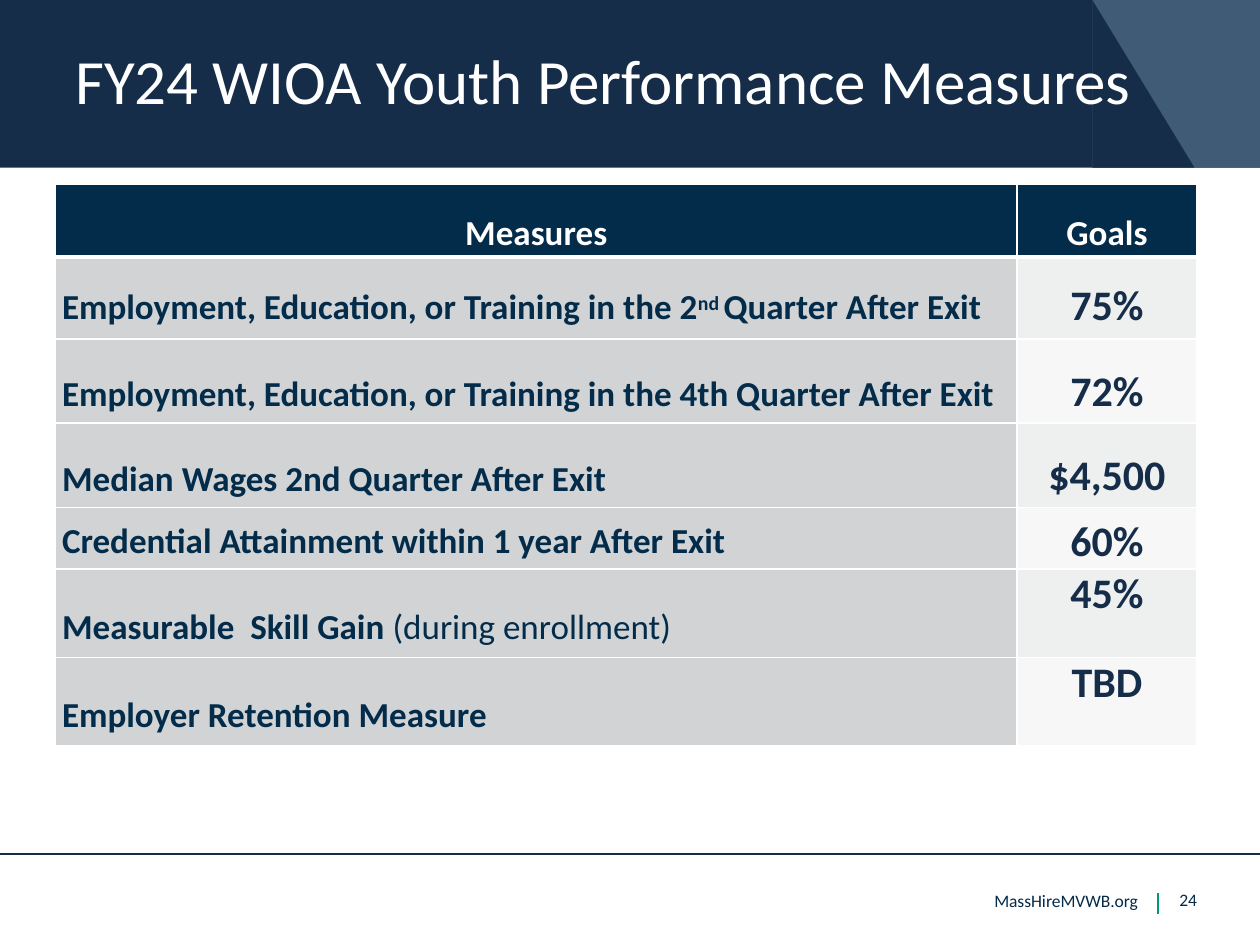
from lxml import etree
from pptx import Presentation
from pptx.dml.color import RGBColor as RGB
from pptx.enum.shapes import MSO_CONNECTOR as CONN, MSO_SHAPE as SHAPE
from pptx.enum.text import MSO_ANCHOR as ANCHOR, PP_ALIGN as ALIGN
from pptx.oxml.ns import qn
from pptx.util import Cm, Pt

C = {"navy": "152D49", "ink": "032B4A", "footer": "042B4A", "slate": "405B76",
     "green": "009876", "white": "FFFFFF", "grey": "D1D3D4",
     "odd": "EEEFEF", "even": "F7F7F7"}
HEAD = {"size": 20, "bold": True, "color": "white"}
MEASURE = {"size": 20, "bold": True, "color": "ink"}
GOAL = {"size": 24, "bold": True, "color": "navy"}
SMALL = {"size": 10, "color": "footer"}
COLS = [19.38, 3.63]
ROWS = [
    (1.65, 0.58, [("Employment, Education, or Training in the 2", {}),
                  ("nd ", {"baseline": "26000", "size": 19.5}),
                  ("Quarter After Exit", {})], 0.48, "75%"),
    (1.7, 0.7, [("Employment, Education, or Training in the 4th Quarter After Exit", {})],
     0.56, "72%"),
    (1.7, 0.7, [("Median Wages 2nd Quarter After Exit", {})], 0.56, "$4,500"),
    (1.24, 0.25, [("Credential Attainment within 1 year After Exit", {})], 0.18, "60%"),
    (1.78, 0.74, [("Measurable  Skill Gain ", {}),
                  ("(during enrollment)", {"bold": False})], 0, "45%"),
    (1.78, 0.74, [("Employer Retention Measure", {})], 0, "TBD"),
]


class Deck:
    """Holds the style and the current slide, with a method per element."""

    def __init__(self, prs, font="Calibri"):
        self.font = font
        self.s = prs.slides.add_slide(prs.slide_layouts[6])

    def fill_text(self, box, tf, runs, style, align=ALIGN.LEFT, margins=(0, 0, 0, 0),
                  spacing=None):
        for side, m in zip(("left", "top", "right", "bottom"), margins):
            setattr(box, f"margin_{side}", Cm(m))
        p = tf.paragraphs[0]
        p.alignment = align
        if spacing:
            p.line_spacing = spacing
        for text, extra in runs:
            r = p.add_run()
            r.text = text
            fmt = {"name": self.font, **style, **extra}
            r.font.color.rgb = RGB.from_string(C[fmt.pop("color")])
            if "baseline" in fmt:
                r._r.get_or_add_rPr().set("baseline", fmt.pop("baseline"))
            fmt["size"] = Pt(fmt["size"])
            for key, value in fmt.items():
                setattr(r.font, key, value)

    def text(self, x, y, w, h, text, style, wrap=True, **layout):
        tf = self.s.shapes.add_textbox(Cm(x), Cm(y), Cm(w), Cm(h)).text_frame
        tf.word_wrap = wrap
        tf.vertical_anchor = ANCHOR.MIDDLE
        self.fill_text(tf, tf, [(text, {})], style, **layout)

    def shape(self, kind, x, y, w, h, color):
        sp = self.s.shapes.add_shape(kind, Cm(x), Cm(y), Cm(w), Cm(h))
        sp.shadow.inherit = False
        sp.fill.solid()
        sp.fill.fore_color.rgb = RGB.from_string(C[color])
        sp.line.fill.background()

    def line(self, x1, y1, x2, y2, color):
        ln = self.s.shapes.add_connector(CONN.STRAIGHT, Cm(x1), Cm(y1), Cm(x2), Cm(y2))
        ln.line.color.rgb = RGB.from_string(C[color])
        ln.line.width = Pt(1)
        etree.SubElement(ln._element.spPr, qn("a:effectLst"))

    def table(self, x, y, cols, heights):
        tbl = self.s.shapes.add_table(len(heights), len(cols), Cm(x), Cm(y),
                                      Cm(sum(cols)), Cm(sum(heights))).table
        tbl.first_row = tbl.horz_banding = False
        for col, w in zip(tbl.columns, cols):
            col.width = Cm(w)
        for row, h in zip(tbl.rows, heights):
            row.height = Cm(h)
        return tbl

    def cell(self, cell, runs, style, fill, align, left=0, top=0, edges=(1, 1, 1, 1)):
        self.fill_text(cell, cell.text_frame, runs, style, align, (left, top, 0, 0))
        cell.fill.solid()
        cell.fill.fore_color.rgb = RGB.from_string(C[fill])
        pr = cell._tc.get_or_add_tcPr()
        for i, (side, width) in enumerate(zip("LRTB", edges)):
            ln = etree.Element(qn(f"a:ln{side}"), w=str(int(Pt(width))))
            solid = etree.SubElement(ln, qn("a:solidFill"))
            etree.SubElement(solid, qn("a:srgbClr"), val=C["white"])
            pr.insert(i, ln)


def main():
    prs = Presentation()
    prs.slide_width, prs.slide_height = Cm(25.4), Cm(19.05)
    d = Deck(prs)
    d.shape(SHAPE.RECTANGLE, 0, -0.02, 25.4, 3.4, "navy")
    d.shape(SHAPE.RECTANGLE, 22.02, 0, 3.38, 3.38, "slate")
    d.shape(SHAPE.RIGHT_TRIANGLE, 22.02, 0, 2.06, 3.38, "navy")
    d.line(0, 17.22, 25.4, 17.22, "navy")
    d.line(23.34, 18.42, 23.34, 18.01, "green")
    d.text(12.09, 17.65, 10.85, 1.02, "MassHireMVWB.org", SMALL, wrap=False,
           align=ALIGN.RIGHT, margins=(0, 0.13, 0, 0.13))
    d.text(23.32, 17.65, 0.81, 1.02, "24", SMALL, align=ALIGN.RIGHT, spacing=Pt(10.4))
    d.text(1.27, 0.38, 22.61, 2.64, "FY24 WIOA Youth Performance Measures",
           {"size": 36, "color": "white"}, margins=(0.25, 0.13, 0.25, 0.13), spacing=0.9)

    tbl = d.table(1.12, 3.71, COLS, [1.47] + [row[0] for row in ROWS])
    for j, label in enumerate(["Measures", "Goals"]):
        d.cell(tbl.cell(0, j), [(label, {})], HEAD, "ink", ALIGN.CENTER,
               top=0.56, edges=(1, 1, 1, 3))
    for i, (_, top, measure, goal_top, goal) in enumerate(ROWS, 1):
        edges = (1, 1, 3 if i == 1 else 1, 1)
        d.cell(tbl.cell(i, 0), measure, MEASURE, "grey", ALIGN.LEFT, 0.13, top, edges)
        d.cell(tbl.cell(i, 1), [(goal, {})], GOAL, "odd" if i % 2 else "even",
               ALIGN.CENTER, 0, goal_top, edges)
    prs.save("out.pptx")


if __name__ == "__main__":
    main()
